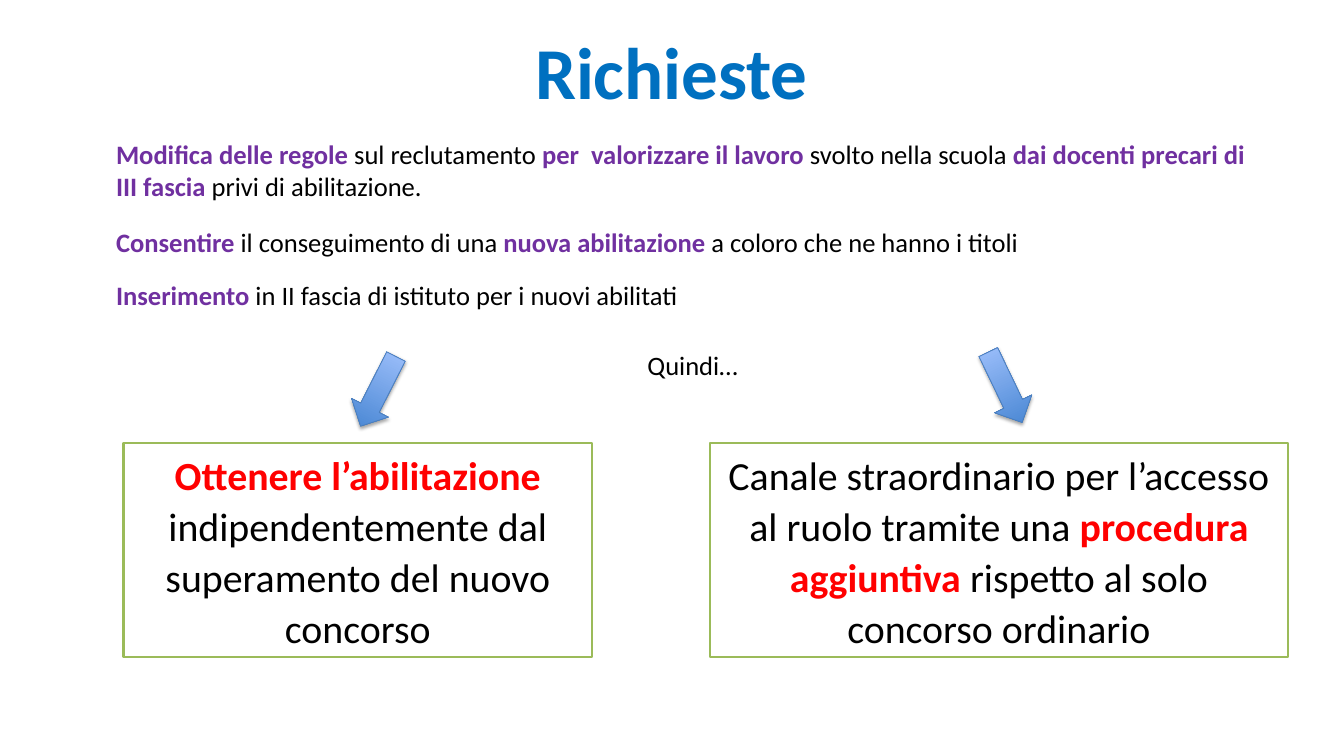
from lxml import etree
from pptx import Presentation
from pptx.dml.color import RGBColor
from pptx.enum.shapes import MSO_SHAPE as Shape
from pptx.enum.text import MSO_ANCHOR as Anchor, MSO_AUTO_SIZE as AutoSize, PP_ALIGN as Align
from pptx.oxml import parse_xml
from pptx.oxml.ns import nsdecls, qn
from pptx.util import Cm, Pt

FONT = "Calibri"
BLUE = RGBColor(0x00, 0x70, 0xC0)
PURPLE = RGBColor(0x70, 0x30, 0xA0)
RED = RGBColor(0xFF, 0x00, 0x00)
BLACK = RGBColor(0x00, 0x00, 0x00)
WHITE = RGBColor(0xFF, 0xFF, 0xFF)
GREEN = RGBColor(0x9B, 0xBB, 0x59)
ARROW_DARK = RGBColor(0x3F, 0x80, 0xCE)
ARROW_LIGHT = RGBColor(0xA4, 0xC4, 0xFF)
ARROW_LINE = RGBColor(0x4B, 0x7E, 0xBC)

# Each request: top, height, alignment, line spacing, spans of (text, colour)
REQUESTS = [
    (4.27, 2.31, Align.LEFT, 1.0, [
        ("Modifica delle regole ", PURPLE), ("sul reclutamento ", BLACK),
        ("per  valorizzare il lavoro ", PURPLE), ("svolto nella scuola ", BLACK),
        ("dai docenti precari di III fascia", PURPLE), (" privi di abilitazione.", BLACK)]),
    (6.99, 1.3, Align.JUSTIFY, 1.07, [
        ("Consentire", PURPLE), (" il conseguimento di una ", BLACK),
        ("nuova abilitazione ", PURPLE), ("a coloro che ne hanno i titoli", BLACK)]),
    (8.69, 1.3, Align.JUSTIFY, 1.07, [
        ("Inserimento", PURPLE), (" in II fascia di istituto per i nuovi abilitati", BLACK)]),
    (10.92, 1.3, Align.CENTER, 1.07, [("Quindi…", BLACK)]),
]

# Each outcome: left, width, spans
OUTCOMES = [
    (3.94, 14.94, [
        ("Ottenere l’abilitazione ", RED),
        ("indipendentemente dal superamento del nuovo concorso", BLACK)]),
    (22.63, 18.44, [
        ("Canale straordinario per l’accesso al ruolo tramite una ", BLACK),
        ("procedura aggiuntiva", RED), (" rispetto al solo concorso ordinario", BLACK)]),
]

# Each arrow: left, top, rotation
ARROWS = [(11.4, 11.23, 26.9), (31.39, 11.1, 334.3)]


def write_text(frame, spans, size, align, spacing=1.0):
    """Fill the frame with one paragraph; every coloured span is bold."""
    frame.word_wrap = True
    para = frame.paragraphs[0]
    para.alignment = align
    para.line_spacing = spacing
    for text, colour in spans:
        span = para.add_run()
        span.text = text
        span.font.name = FONT
        span.font.size = Pt(size)
        span.font.bold = colour != BLACK
        span.font.color.rgb = colour


def set_title(page, text):
    title = page.shapes.title
    title.left, title.top, title.width, title.height = Cm(2.13), Cm(0.94), Cm(38.56), Cm(2.62)
    frame = title.text_frame
    frame.auto_size = AutoSize.NONE
    frame.vertical_anchor = Anchor.MIDDLE
    frame.margin_left = frame.margin_right = Cm(0.38)
    frame.margin_top = frame.margin_bottom = Cm(0.2)
    write_text(frame, [(text, BLUE)], 66, Align.CENTER)


def add_request(page, top, height, align, spacing, spans):
    box = page.shapes.add_textbox(Cm(3.45), Cm(top), Cm(37.26), Cm(height))
    write_text(box.text_frame, spans, 24, align, spacing)


def add_outcome(page, left, width, spans):
    box = page.shapes.add_shape(Shape.RECTANGLE, Cm(left), Cm(14.12), Cm(width), Cm(6.83))
    box.shadow.inherit = False
    box.fill.solid()
    box.fill.fore_color.rgb = WHITE
    box.line.color.rgb = GREEN
    box.line.width = Pt(2)
    box.text_frame.vertical_anchor = Anchor.TOP
    write_text(box.text_frame, spans, 36, Align.CENTER, 1.07)


def add_soft_shadow(shape):
    shape.shadow.inherit = False
    effects = shape._element.spPr.find(qn("a:effectLst"))
    shadow = parse_xml(
        f'<a:outerShdw {nsdecls("a")} blurRad="40000" dist="23000" dir="5400000" rotWithShape="0"/>')
    colour = etree.SubElement(shadow, qn("a:srgbClr"), val=str(BLACK))
    etree.SubElement(colour, qn("a:alpha"), val="35000")
    effects.append(shadow)


def add_arrow(page, left, top, rotation):
    arrow = page.shapes.add_shape(Shape.DOWN_ARROW, Cm(left), Cm(top), Cm(1.32), Cm(2.49))
    arrow.rotation = rotation
    arrow.fill.gradient()
    arrow.fill.gradient_angle = 90
    for stop, colour in zip(arrow.fill.gradient_stops, (ARROW_DARK, ARROW_LIGHT)):
        stop.color.rgb = colour
    arrow.line.color.rgb = ARROW_LINE
    arrow.line.width = Pt(0.75)
    add_soft_shadow(arrow)


def main():
    deck = Presentation()
    deck.slide_width, deck.slide_height = Cm(42.85), Cm(24)
    page = deck.slides.add_slide(deck.slide_layouts[5])

    # Title
    set_title(page, "Richieste")

    # Two outcomes and the arrows that lead to them
    for outcome in OUTCOMES:
        add_outcome(page, *outcome)
    for arrow in ARROWS:
        add_arrow(page, *arrow)

    # Requests
    for request in REQUESTS:
        add_request(page, *request)

    deck.save("out.pptx")


if __name__ == "__main__":
    main()
